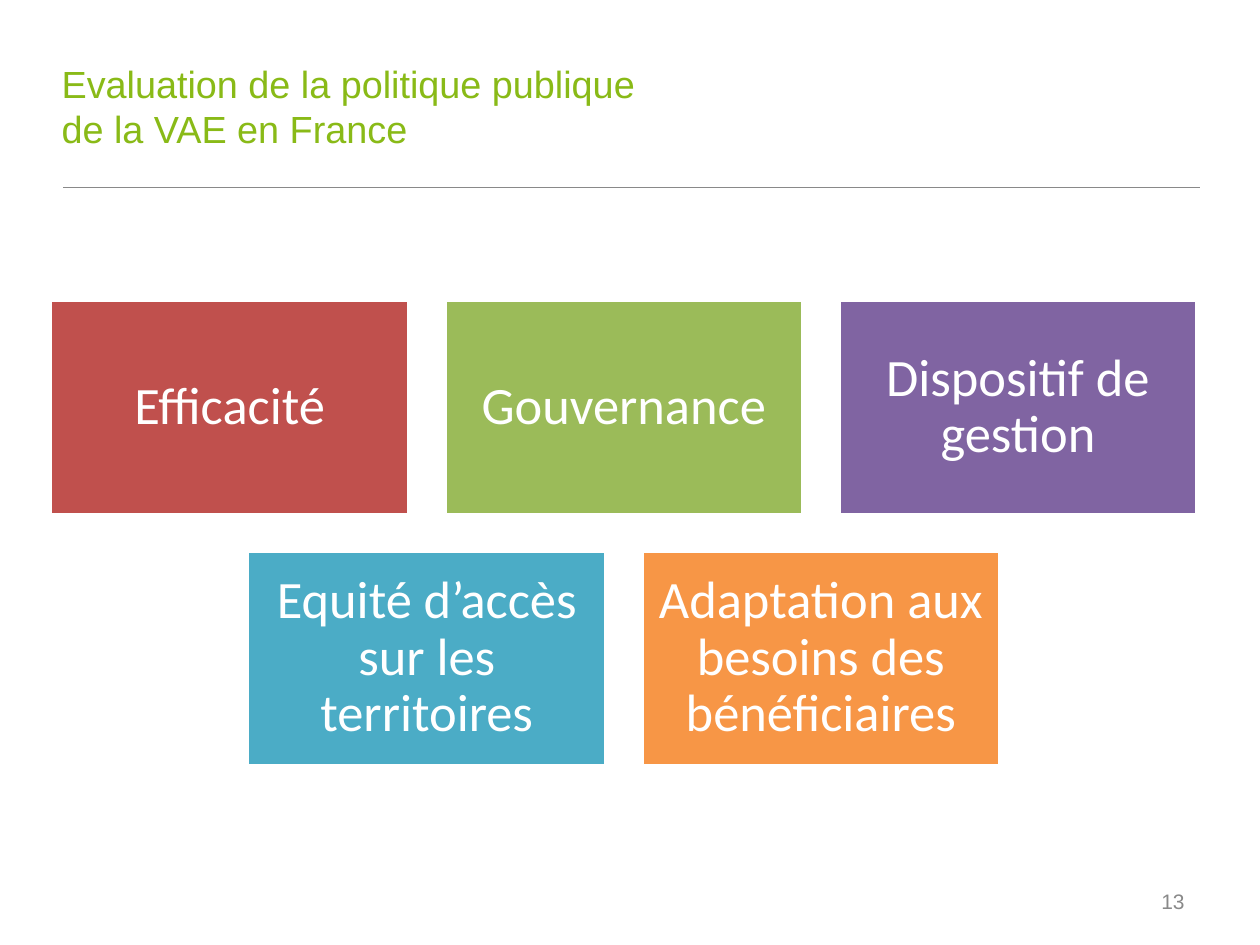
from lxml import etree
from pptx import Presentation
from pptx.dml.color import RGBColor
from pptx.enum import shapes, text
from pptx.oxml.ns import qn
from pptx.util import Pt

ROWS = [
    [("Efficacité", "C0504D"), ("Gouvernance", "9BBB59"), ("Dispositif de gestion", "8064A2")],
    [("Equité d’accès sur les territoires", "4BACC6"),
     ("Adaptation aux besoins des bénéficiaires", "F79646")],
]
BOX_W, BOX_H, GAP = 204.7, 122.8, 20.5
CENTER_X, TOP = 356.5, 171.5


def color(value):
    return RGBColor.from_string(value)


def write(tf, content, size, font, hex_color, align, anchor):
    tf.word_wrap = True
    tf.vertical_anchor = anchor
    p = tf.paragraphs[0]
    p.text = content
    p.alignment = align
    p.font.size = Pt(size)
    p.font.name = font
    p.font.color.rgb = color(hex_color)
    return p


def add_title(slide, content):
    sp = slide.shapes.title
    sp.left, sp.top, sp.width, sp.height = Pt(28), Pt(32.4), Pt(348.5), Pt(57.6)
    sp.text_frame.auto_size = text.MSO_AUTO_SIZE.NONE
    write(sp.text_frame, content, 21.6, "Arial", "89BA17",
          text.PP_ALIGN.LEFT, text.MSO_ANCHOR.BOTTOM)


def add_rule(slide):
    line = slide.shapes.add_connector(
        shapes.MSO_CONNECTOR.STRAIGHT, Pt(36), Pt(107.2), Pt(685.8), Pt(107.2))
    line.line.color.rgb = color("898989")
    line.line.width = Pt(1)
    etree.SubElement(line._element.spPr, qn("a:effectLst"))


def add_box(slide, left, top, content, fill):
    sp = slide.shapes.add_shape(
        shapes.MSO_SHAPE.RECTANGLE, Pt(left), Pt(top), Pt(BOX_W), Pt(BOX_H))
    sp.shadow.inherit = False
    sp.fill.solid()
    sp.fill.fore_color.rgb = color(fill)
    sp.line.color.rgb = color("FFFFFF")
    sp.line.width = Pt(2)
    tf = sp.text_frame
    tf.margin_left = tf.margin_right = tf.margin_top = tf.margin_bottom = Pt(8.5)
    p = write(tf, content, 30, "Calibri", "FFFFFF",
              text.PP_ALIGN.CENTER, text.MSO_ANCHOR.MIDDLE)
    p.line_spacing = 0.9


def add_boxes(slide):
    for i, row in enumerate(ROWS):
        row_w = len(row) * (BOX_W + GAP) - GAP
        for j, (content, fill) in enumerate(row):
            left = CENTER_X - row_w / 2 + j * (BOX_W + GAP)
            add_box(slide, left, TOP + i * (BOX_H + GAP), content, fill)


def add_page_number(slide, number):
    sp = slide.shapes.add_textbox(Pt(516), Pt(500.5), Pt(168), Pt(28.8))
    write(sp.text_frame, number, 12, "Arial", "898989",
          text.PP_ALIGN.RIGHT, text.MSO_ANCHOR.MIDDLE)


def main():
    prs = Presentation()
    prs.slide_width, prs.slide_height = Pt(720), Pt(540)
    slide = prs.slides.add_slide(prs.slide_layouts[5])
    add_rule(slide)
    add_title(slide, "Evaluation de la politique publique de la VAE en France")
    add_page_number(slide, "13")
    add_boxes(slide)
    prs.save("out.pptx")


if __name__ == "__main__":
    main()
